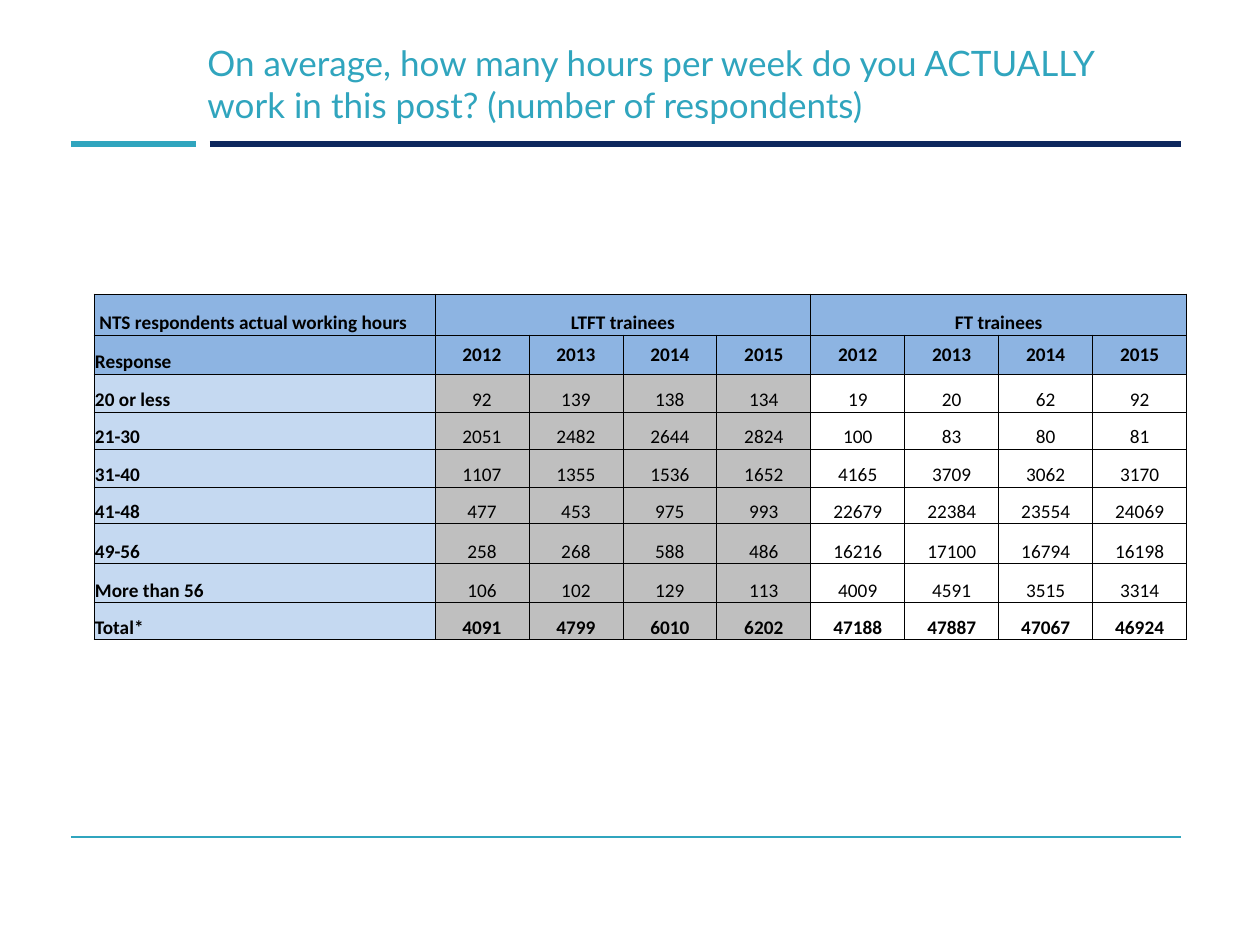
import pptx
import pptx.util
from pptx.dml.color import RGBColor
from pptx.enum.shapes import MSO_CONNECTOR
from pptx.enum.text import MSO_ANCHOR, PP_ALIGN
from pptx.oxml.ns import qn
from lxml import etree

TITLE = ("On average, how many hours per week do you ACTUALLY work in this post? "
         "(number of respondents)")
CORNER = " NTS respondents actual working hours"
GROUPS = ["LTFT trainees", "FT trainees"]
YEARS = ["2012", "2013", "2014", "2015"]
RESPONSES = [
    ("20 or less", [92, 139, 138, 134], [19, 20, 62, 92]),
    ("21-30", [2051, 2482, 2644, 2824], [100, 83, 80, 81]),
    ("31-40", [1107, 1355, 1536, 1652], [4165, 3709, 3062, 3170]),
    ("41-48", [477, 453, 975, 993], [22679, 22384, 23554, 24069]),
    ("49-56", [258, 268, 588, 486], [16216, 17100, 16794, 16198]),
    ("More than 56", [106, 102, 129, 113], [4009, 4591, 3515, 3314]),
    ("Total*", [4091, 4799, 6010, 6202], [47188, 47887, 47067, 46924]),
]

THEME = {
    "teal": "30A5BE", "navy": "0E285E", "ink": "000000",
    "header": "8DB4E2", "label": "C5D9F1", "ltft": "BFBFBF", "ft": "FFFFFF",
    "title_font": "Lato", "title_size": 20,
    "table_font": "Calibri", "table_size": 11,
    "rule": 3, "thin_rule": 0.75, "border": 0.5,
}

# Lengths in px, 126 to the inch
RULES = [
    (210, 144, 1181, 144, "navy", "rule"),
    (71, 144, 196, 144, "teal", "rule"),
    (71, 837, 1181, 837, "teal", "thin_rule"),
]
TITLE_BOX = (195, 37, 987, 92)
TABLE_LEFT, TABLE_TOP = 94, 294
LABEL_WIDTH, VALUE_WIDTH = 341, 94
ROW_HEIGHTS = [41, 39, 38, 37, 38, 37, 40, 39, 37]


def px(n):
    return pptx.util.Emu(round(n * 914400 / 126))


def color(name):
    return RGBColor.from_string(THEME[name])


def add_run(p, text, font, size, ink, bold=False):
    r = p.add_run()
    r.text = text
    r.font.name = THEME[font]
    r.font.size = pptx.util.Pt(THEME[size])
    r.font.color.rgb = color(ink)
    r.font.bold = bold


def add_rule(s, x1, y1, x2, y2, ink, weight):
    line = s.shapes.add_connector(MSO_CONNECTOR.STRAIGHT, px(x1), px(y1), px(x2), px(y2))
    line.line.color.rgb = color(ink)
    line.line.width = pptx.util.Pt(THEME[weight])
    etree.SubElement(line._element.spPr, qn("a:effectLst"))


def add_title(s):
    tf = s.shapes.add_textbox(*map(px, TITLE_BOX)).text_frame
    tf.word_wrap = True
    tf.vertical_anchor = MSO_ANCHOR.MIDDLE
    add_run(tf.paragraphs[0], TITLE, "title_font", "title_size", "teal")


def add_borders(cell):
    tc_pr = cell._tc.get_or_add_tcPr()
    for side in "LRTB":
        ln = etree.SubElement(tc_pr, qn(f"a:ln{side}"),
                              w=str(pptx.util.Pt(THEME["border"])))
        fill = etree.SubElement(ln, qn("a:solidFill"))
        etree.SubElement(fill, qn("a:srgbClr"), val=THEME["ink"])


def fill_name(row, col):
    if row < 2:
        return "header"
    if col == 0:
        return "label"
    return "ltft" if col <= len(YEARS) else "ft"


def add_hours_table(s):
    n = len(YEARS)
    blank = [""] * (n - 1)
    rows = [[CORNER, GROUPS[0], *blank, GROUPS[1], *blank],
            ["Response", *YEARS, *YEARS]]
    rows += [[label, *map(str, ltft + ft)] for label, ltft, ft in RESPONSES]
    widths = [LABEL_WIDTH] + [VALUE_WIDTH] * (2 * n)

    table = s.shapes.add_table(len(rows), len(widths), px(TABLE_LEFT), px(TABLE_TOP),
                               px(sum(widths)), px(sum(ROW_HEIGHTS))).table
    table.first_row = table.horz_banding = False
    for column, width in zip(table.columns, widths):
        column.width = px(width)
    for row, height in zip(table.rows, ROW_HEIGHTS):
        row.height = px(height)
    for first in (1, 1 + n):
        table.cell(0, first).merge(table.cell(0, first + n - 1))

    for i, texts in enumerate(rows):
        for j, text in enumerate(texts):
            cell = table.cell(i, j)
            add_borders(cell)
            cell.fill.solid()
            cell.fill.fore_color.rgb = color(fill_name(i, j))
            cell.margin_left = cell.margin_right = cell.margin_top = px(1)
            cell.margin_bottom = 0
            is_year = i == 1 and j > 0
            cell.vertical_anchor = MSO_ANCHOR.MIDDLE if is_year else MSO_ANCHOR.BOTTOM
            p = cell.text_frame.paragraphs[0]
            p.alignment = PP_ALIGN.CENTER if j else PP_ALIGN.LEFT
            if text:
                bold = i < 2 or j == 0 or i == len(rows) - 1
                add_run(p, text, "table_font", "table_size", "ink", bold)


def main():
    prs = pptx.Presentation()
    prs.slide_width, prs.slide_height = px(1260), px(945)
    s = prs.slides.add_slide(prs.slide_layouts[6])
    for rule in RULES:
        add_rule(s, *rule)
    add_title(s)
    add_hours_table(s)
    prs.save("out.pptx")


if __name__ == "__main__":
    main()
